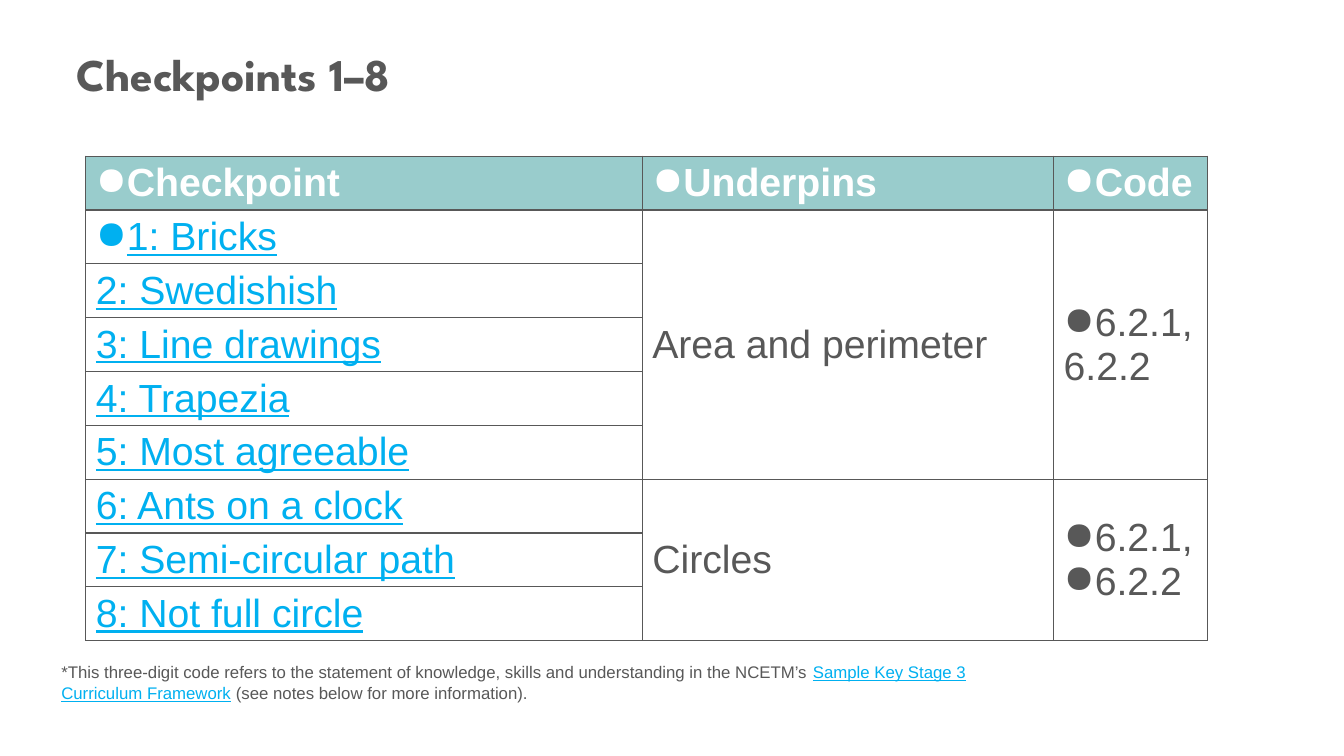
import pptx
import pptx.dml.color
import pptx.enum.text
import pptx.oxml
import pptx.oxml.ns
import pptx.util
from pptx.util import Inches

COLORS = {"text": "585858", "link": "00B0F0", "header": "99CCCC", "white": "FFFFFF"}
TITLE = "Checkpoints 1–8"
HEADERS = ["Checkpoint", "Underpins", "Code"]
# Topic, code paragraphs, checkpoints
GROUPS = [
    ("Area and perimeter", ["6.2.1, 6.2.2"],
     ["1: Bricks", "2: Swedishish", "3: Line drawings", "4: Trapezia", "5: Most agreeable"]),
    ("Circles", ["6.2.1,", "6.2.2"],
     ["6: Ants on a clock", "7: Semi-circular path", "8: Not full circle"]),
]
FOOTNOTE = [
    ("*This three-digit code refers to the statement of knowledge, skills and "
     "understanding in the NCETM’s ", False),
    ("Sample Key Stage 3 Curriculum Framework", True),
    (" (see notes below for more information).", False),
]
COLUMN_WIDTHS = [5.52, 4.08, 1.53]
HEADER_HEIGHT, ROW_HEIGHT = 0.33, 0.45


def rgb(name):
    return pptx.dml.color.RGBColor.from_string(COLORS[name])


def style_font(font, size, color, name="Arial", bold=False, underline=False):
    font.name, font.size = name, pptx.util.Pt(size)
    font.bold, font.underline = bold, underline
    font.color.rgb = rgb(color)


def add_bullet(paragraph):
    properties = paragraph._p.get_or_add_pPr()
    properties.set("marL", "0")
    properties.set("indent", "0")
    bullet = pptx.oxml.parse_xml(f'<a:buChar {pptx.oxml.ns.nsdecls("a")} char="●"/>')
    properties.append(bullet)


def add_borders(cell):
    properties = cell._tc.get_or_add_tcPr()
    for side in ("lnL", "lnR", "lnT", "lnB"):
        properties.append(pptx.oxml.parse_xml(
            f'<a:{side} {pptx.oxml.ns.nsdecls("a")} w="12700"><a:solidFill>'
            f'<a:srgbClr val="{COLORS["text"]}"/></a:solidFill></a:{side}>'))


def write_cell(cell, lines, color, bullet=False, bold=False, underline=False):
    cell.text = "\n".join(lines)
    for paragraph in cell.text_frame.paragraphs:
        if bullet:
            add_bullet(paragraph)
        style_font(paragraph.font, 28, color, bold=bold, underline=underline)


def add_title(slide):
    title = slide.shapes.title
    title.left, title.top = Inches(0.66), Inches(0.47)
    title.width, title.height = Inches(12), Inches(1.07)
    frame = title.text_frame
    frame.text = TITLE
    frame.vertical_anchor = pptx.enum.text.MSO_ANCHOR.TOP
    paragraph = frame.paragraphs[0]
    paragraph.alignment = pptx.enum.text.PP_ALIGN.LEFT
    paragraph.line_spacing = 0.9
    style_font(paragraph.font, 32.4, "text", name="League Spartan", bold=True)


def add_checkpoint_table(slide):
    row_count = 1 + sum(len(checkpoints) for _, _, checkpoints in GROUPS)
    table = slide.shapes.add_table(
        row_count, len(HEADERS), Inches(0.85), Inches(1.55), Inches(sum(COLUMN_WIDTHS)),
        Inches(HEADER_HEIGHT + ROW_HEIGHT * (row_count - 1))).table
    for column, width in zip(table.columns, COLUMN_WIDTHS):
        column.width = Inches(width)
    for index, row in enumerate(table.rows):
        row.height = Inches(ROW_HEIGHT if index else HEADER_HEIGHT)
        for cell in row.cells:
            add_borders(cell)
            if index:
                cell.fill.background()
                cell.vertical_anchor = pptx.enum.text.MSO_ANCHOR.MIDDLE
            else:
                cell.fill.solid()
                cell.fill.fore_color.rgb = rgb("header")

    for column, header in enumerate(HEADERS):
        write_cell(table.cell(0, column), [header], "white", bullet=True, bold=True)
    first = 1
    for topic, codes, checkpoints in GROUPS:
        last = first + len(checkpoints) - 1
        for row, checkpoint in enumerate(checkpoints, first):
            write_cell(table.cell(row, 0), [checkpoint], "link", bullet=row == 1, underline=True)
        for column in (1, 2):
            table.cell(first, column).merge(table.cell(last, column))
        write_cell(table.cell(first, 1), [topic], "text")
        write_cell(table.cell(first, 2), codes, "text", bullet=True)
        first = last + 1


def add_footnote(slide):
    frame = slide.shapes.add_textbox(
        Inches(0.51), Inches(6.52), Inches(9.74), Inches(0.5)).text_frame
    frame.word_wrap = True
    for text, is_link in FOOTNOTE:
        run = frame.paragraphs[0].add_run()
        run.text = text
        style_font(run.font, 12, "link" if is_link else "text", underline=is_link)


def main():
    presentation = pptx.Presentation()
    presentation.slide_width, presentation.slide_height = Inches(13.33), Inches(7.5)
    slide = presentation.slides.add_slide(presentation.slide_layouts[5])
    add_title(slide)
    add_checkpoint_table(slide)
    add_footnote(slide)
    presentation.save("out.pptx")


if __name__ == "__main__":
    main()
